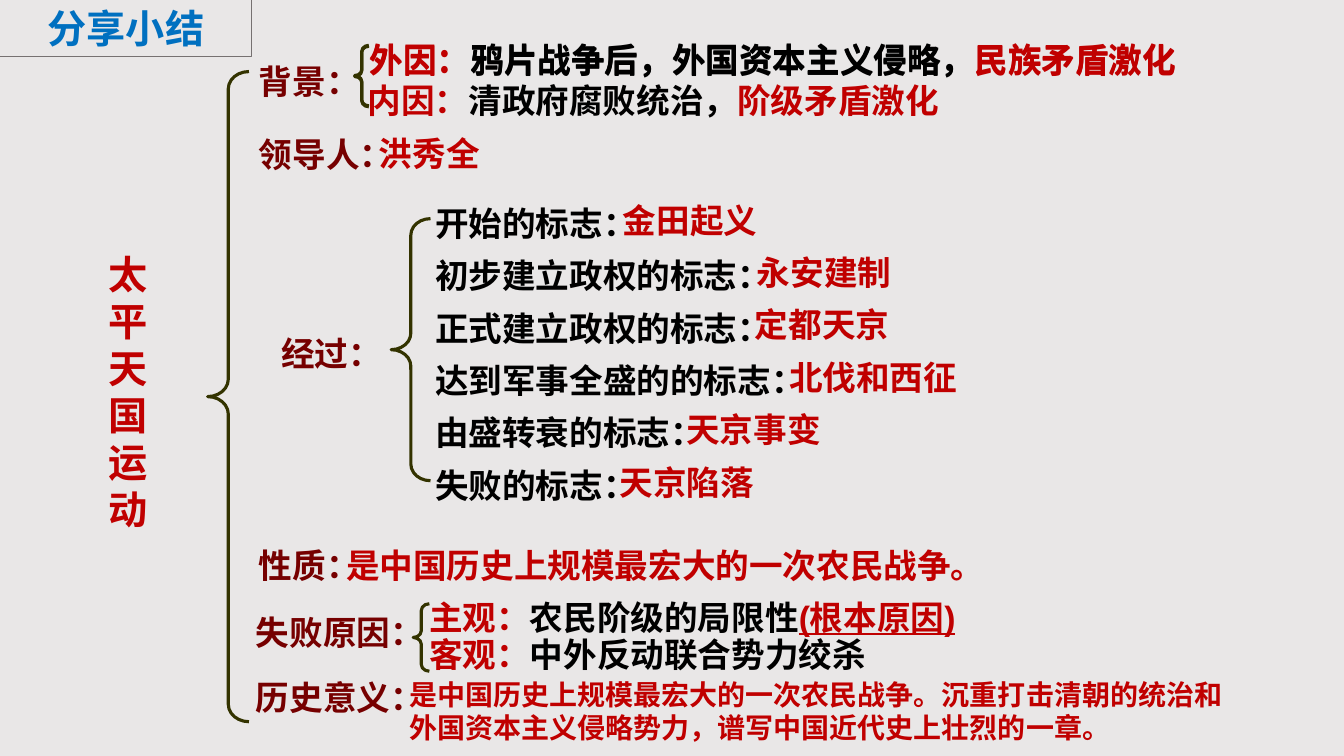
from pptx import Presentation
from pptx.dml.color import RGBColor
from pptx.enum.shapes import MSO_SHAPE
from pptx.enum.text import MSO_ANCHOR, MSO_AUTO_SIZE, PP_ALIGN
from pptx.oxml.ns import qn
from pptx.util import Pt

COLORS = {
    "background": "E9E7E7",
    "heading": "760000",
    "answer": "C00000",
    "body": "000000",
    "brace": "333300",
    "header": "0070C0",
    "border": "767171",
}
ARIAL, NOTO = "Arial", "Noto Sans CJK SC"
LINE_RATIO = 1.2
INSET = 3.6

HEADER = "分享小结"
TOPIC = "太平天国运动"
HEADINGS = [
    ("背景：", 177.8, 40.3, 107),
    ("领导人：", 177.8, 92.2, 107),
    ("经过：", 193.7, 234, 107),
    ("性质：", 177.8, 385.9, 112),
    ("失败原因：", 175.7, 433.4, 230),
    ("历史意义：", 175.7, 480.2, 161),
]
STAGES = [
    ("开始的标志：", "金田起义", 437.8, 111.6),
    ("初步建立政权的标志：", "永安建制", 533.5, 111.6),
    ("正式建立政权的标志：", "定都天京", 532.1, 111.6),
    ("达到军事全盛的的标志：", "北伐和西征", 556.6, 135.4),
    ("由盛转衰的标志：", "天京事变", 483.1, 111.6),
    ("失败的标志：", "天京陷落", 435.6, 111.6),
]
EXTERNAL_CAUSE = [
    ("外因：", "answer"),
    ("鸦片战争后，外国资本主义侵略，", "body"),
    ("民族矛盾激化", "answer"),
]
INTERNAL_CAUSE = [
    ("内因：", "answer"),
    ("清政府腐败统治，", "body"),
    ("阶级矛盾激化", "answer"),
]
LEADER = [("洪秀全", "answer")]
NATURE = [("是中国历史上规模最宏大的一次农民战争。", "answer")]
SUBJECTIVE = [
    ("主观：", "answer"),
    ("农民阶级的局限性", "body"),
    ("(根本原因)", "answer", True),
]
OBJECTIVE = [("客观：", "answer"), ("中外反动联合势力绞杀", "body")]
MEANING = [
    [("是中国历史上规模最宏大的一次农民战争。沉重打击清朝的统治和", "answer")],
    [("外国资本主义侵略势力，谱写中国近代史上壮烈的一章。", "answer")],
]
BRACES = [
    (148.3, 51.1, 29.5, 464.4),
    (279.4, 156.2, 28.1, 187.2),
    (295.2, 431.3, 11.5, 48.2),
    (253.4, 33.1, 10.1, 43.2),
    (253.4, 32.4, 10.1, 43.2),
]

deck = Presentation()
deck.slide_width, deck.slide_height = Pt(960), Pt(540)
slide = deck.slides.add_slide(deck.slide_layouts[6])
slide.background.fill.solid()
slide.background.fill.fore_color.rgb = RGBColor.from_string(COLORS["background"])


def write(box, lines, size=24, face=ARIAL, centred=False, wrap=True, leading=1):
    frame = box.text_frame
    frame.word_wrap = wrap
    frame.auto_size = MSO_AUTO_SIZE.SHAPE_TO_FIT_TEXT
    frame.vertical_anchor = MSO_ANCHOR.TOP
    for index, line in enumerate(lines):
        paragraph = frame.add_paragraph() if index else frame.paragraphs[0]
        paragraph.alignment = PP_ALIGN.CENTER if centred else PP_ALIGN.LEFT
        paragraph.line_spacing = Pt(size * LINE_RATIO * leading)
        for words, color, *underlined in line:
            run = paragraph.add_run()
            run.text = words
            run.font.size, run.font.bold, run.font.name = Pt(size), True, face
            run.font.color.rgb = RGBColor.from_string(COLORS[color])
            if underlined:
                run.font.underline = True
            properties = run.font._element
            properties.set("lang", "zh-CN")
            east_asian = properties.makeelement(qn("a:ea"), {"typeface": face})
            properties.find(qn("a:latin")).addnext(east_asian)


def add_text(lines, left, top, width, rows=None, size=24, leading=1, **style):
    height = (rows or len(lines)) * size * LINE_RATIO * leading + 2 * INSET
    box = slide.shapes.add_textbox(Pt(left), Pt(top), Pt(width), Pt(height))
    write(box, lines, size, leading=leading, **style)


def add_outline(preset, place, color, weight):
    outline = slide.shapes.add_shape(preset, *map(Pt, place))
    outline.shadow.inherit = False
    outline.fill.background()
    outline.line.color.rgb = RGBColor.from_string(COLORS[color])
    outline.line.width = Pt(weight)
    return outline


for heading, left, top, width in HEADINGS:
    add_text([[(heading, "heading")]], left, top, width)

add_text([[(TOPIC, "answer")]], 70.6, 175, 54.7, rows=len(TOPIC), size=28)

stage_leading = 1.3
stage_pitch = 24 * LINE_RATIO * stage_leading
add_text([[(stage, "body")] for stage, *_ in STAGES], 303.8, 132.5, 398.9,
         leading=stage_leading)
for index, (_, event, left, width) in enumerate(STAGES):
    add_text([[(event, "answer")]], left, 139 + index * stage_pitch, width, wrap=False)

add_text([INTERNAL_CAUSE], 255.6, 53.3, 426.2, wrap=False)
for top, face in ((25.2, NOTO), (24.5, ARIAL)):
    add_text([EXTERNAL_CAUSE], 257, top, 596.2, face=face, wrap=False)
add_text([LEADER], 263.5, 91.4, 209.5)
add_text([NATURE], 159.1, 385.9, 632.2, centred=True)
add_text([SUBJECTIVE], 275, 422.6, 439.2, centred=True)
add_text([OBJECTIVE], 224.6, 449.3, 475.9, centred=True)
add_text(MEANING, 285.1, 480.2, 600.5, size=20, wrap=False)

for place in BRACES:
    brace = add_outline(MSO_SHAPE.LEFT_BRACE, place, "brace", 2.25)
    brace.adjustments[0] = 0.42
    brace.adjustments[1] = 0.5

header_box = add_outline(MSO_SHAPE.RECTANGLE, (0, -0.7, 180, 40.8), "border", 0.75)
write(header_box, [[(HEADER, "header")]], 28, NOTO, centred=True)

deck.save("out.pptx")
